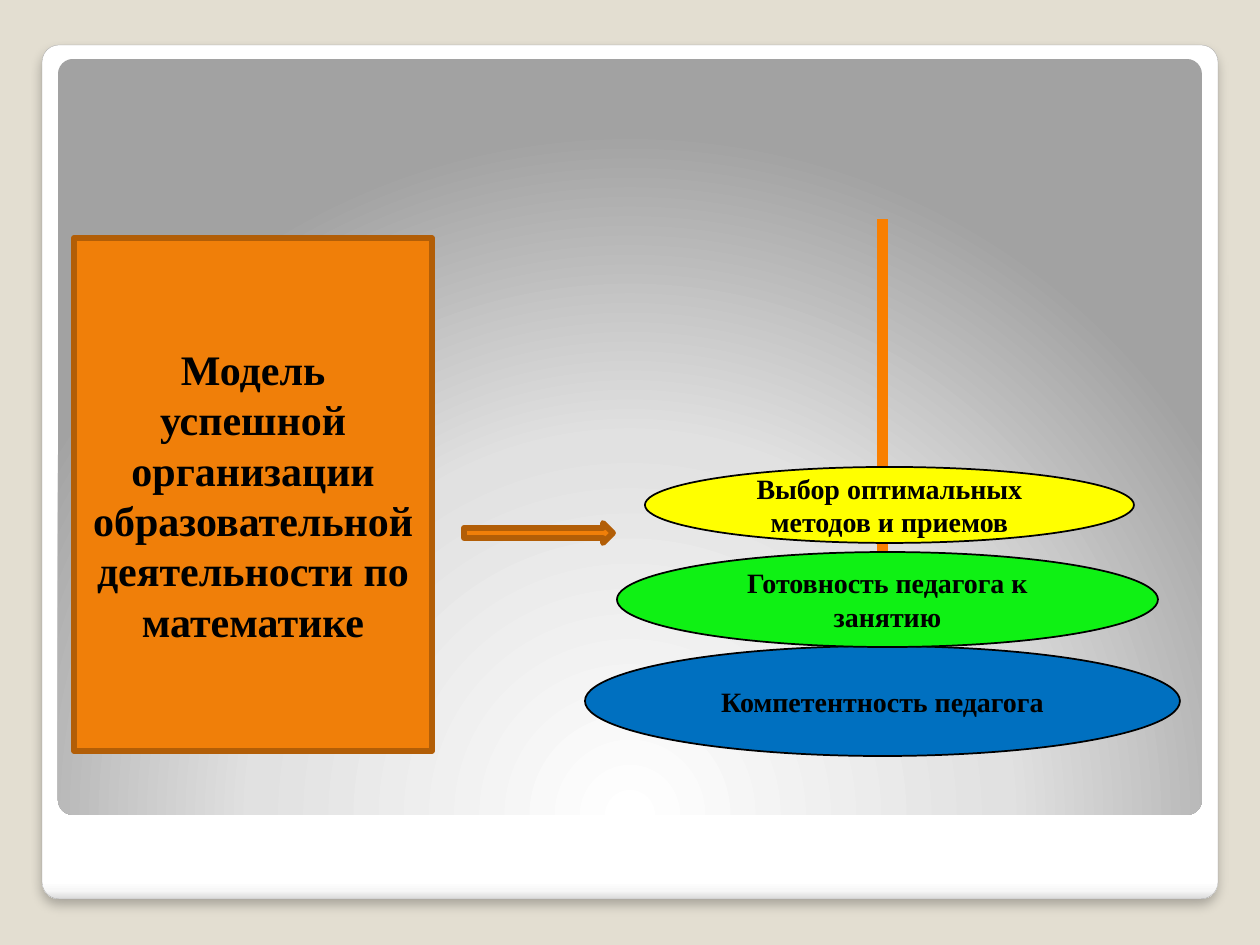
from lxml.etree import SubElement
from pptx import Presentation
from pptx.dml.color import RGBColor
from pptx.enum.shapes import MSO_CONNECTOR, MSO_SHAPE
from pptx.enum.text import MSO_ANCHOR, PP_ALIGN
from pptx.oxml import parse_xml
from pptx.oxml.ns import nsdecls, qn
from pptx.util import Pt

PX = 914400 / 126
FONT = "Times New Roman"
BEIGE = RGBColor(0xE3, 0xDE, 0xD1)
GREY = RGBColor(0xA4, 0xA4, 0xA4)
ORANGE = RGBColor(0xF0, 0x7F, 0x09)
BROWN = RGBColor(0xB2, 0x5E, 0x07)
AXIS = RGBColor(0xF9, 0x7F, 0x00)
BLUE = RGBColor(0x00, 0x70, 0xC0)
GREEN = RGBColor(0x0F, 0xF1, 0x14)
YELLOW = RGBColor(0xFF, 0xFF, 0x00)
BLACK = RGBColor(0, 0, 0)

CARD_STOPS = [(0, "FFFFFF"), (98, "FFFFFF"), (99, "F7F7F7"), (100, "DADADA")]
PANEL_STOPS = [(0, "FFFFFF"), (55, "E1E1E1"), (100, "A2A2A2")]
DOWNWARD = '<a:lin ang="5400000" scaled="0"/>'
FROM_BELOW = ('<a:path path="circle"><a:fillToRect l="50000" t="175000" '
              'r="50000" b="-75000"/></a:path>')


def px(n):
    return round(n * PX)


def add_shape(slide, kind, box, fill=None, line=None, width=1):
    s = slide.shapes.add_shape(kind, *map(px, box))
    s.shadow.inherit = False
    if fill is not None:
        s.fill.solid()
        s.fill.fore_color.rgb = fill
    if line is None:
        s.line.fill.background()
    else:
        s.line.color.rgb = line
        s.line.width = Pt(width)
    return s


def set_gradient(s, stops, direction):
    s.fill.gradient()
    old = s._element.spPr.find(qn("a:gradFill"))
    gs = "".join(f'<a:gs pos="{pos * 1000}"><a:srgbClr val="{color}"/></a:gs>'
                 for pos, color in stops)
    new = parse_xml(f'<a:gradFill {nsdecls("a")} rotWithShape="1">'
                    f'<a:gsLst>{gs}</a:gsLst>{direction}</a:gradFill>')
    old.getparent().replace(old, new)


def add_drop_shadow(s):
    effects = s._element.spPr.find(qn("a:effectLst"))
    effects.append(parse_xml(
        f'<a:outerShdw {nsdecls("a")} blurRad="{Pt(6)}" dist="{Pt(4)}" '
        'dir="5400000" algn="t" rotWithShape="0"><a:srgbClr val="000000">'
        '<a:alpha val="25000"/></a:srgbClr></a:outerShdw>'))


def write_text(s, text, size):
    tf = s.text_frame
    tf.word_wrap = True
    tf.vertical_anchor = MSO_ANCHOR.MIDDLE
    p = tf.paragraphs[0]
    p.alignment = PP_ALIGN.CENTER
    r = p.add_run()
    r.text = text
    r.font.name = FONT
    r.font.size = Pt(size)
    r.font.bold = True
    r.font.color.rgb = BLACK


def add_backdrop(slide, box):
    """White card with a shaded panel inset in its upper part."""
    x, y, w, h = box
    card = add_shape(slide, MSO_SHAPE.ROUNDED_RECTANGLE, box, line=GREY, width=0.16)
    set_gradient(card, CARD_STOPS, DOWNWARD)
    add_drop_shadow(card)
    panel = add_shape(slide, MSO_SHAPE.ROUNDED_RECTANGLE,
                      (x + 16, y + 14, w - 32, h - 98))
    set_gradient(panel, PANEL_STOPS, FROM_BELOW)
    for s in (card, panel):
        s.adjustments[0] = 0.02


def add_model(slide, box):
    """Model block and the arrow leading away from it."""
    x, y, w, h = box
    block = add_shape(slide, MSO_SHAPE.RECTANGLE, box, ORANGE, BROWN, 3.35)
    write_text(block, "Модель успешной организации образовательной "
                      "деятельности по математике", 24)
    add_shape(slide, MSO_SHAPE.RIGHT_ARROW, (x + w + 32, y + 285, 149, 20),
              ORANGE, BROWN, 3.35)


def add_pyramid(slide, box):
    """Discs stacked on a vertical rod, widest at the bottom."""
    x, y, w, h = box

    def add_disc(disc_box, fill, text):
        dx, dy, dw, dh = disc_box
        s = add_shape(slide, MSO_SHAPE.OVAL, (x + dx, y + dy, dw, dh), fill, BLACK)
        write_text(s, text, 16)
        return s

    base = add_disc((0, h - 110, w, 110), BLUE, "Компетентность педагога")
    mid = x + w / 2
    rod = slide.shapes.add_connector(MSO_CONNECTOR.STRAIGHT, px(mid),
                                     px(y + h - 110), px(mid), px(y))
    rod.begin_connect(base, 0)
    rod.line.color.rgb = AXIS
    rod.line.width = Pt(6)
    SubElement(rod._element.spPr, qn("a:effectLst"))
    add_disc((32, 333, 541, 95), GREEN, "Готовность педагога к занятию")
    add_disc((60, 248, 489, 76), YELLOW, "Выбор оптимальных методов и приемов")


def main():
    prs = Presentation()
    prs.slide_width, prs.slide_height = px(1260), px(945)
    slide = prs.slides.add_slide(prs.slide_layouts[6])
    slide.background.fill.solid()
    slide.background.fill.fore_color.rgb = BEIGE
    add_backdrop(slide, (42, 45, 1176, 854))
    add_model(slide, (74, 238, 358, 513))
    add_pyramid(slide, (585, 219, 595, 537))
    prs.save("out.pptx")


if __name__ == "__main__":
    main()
